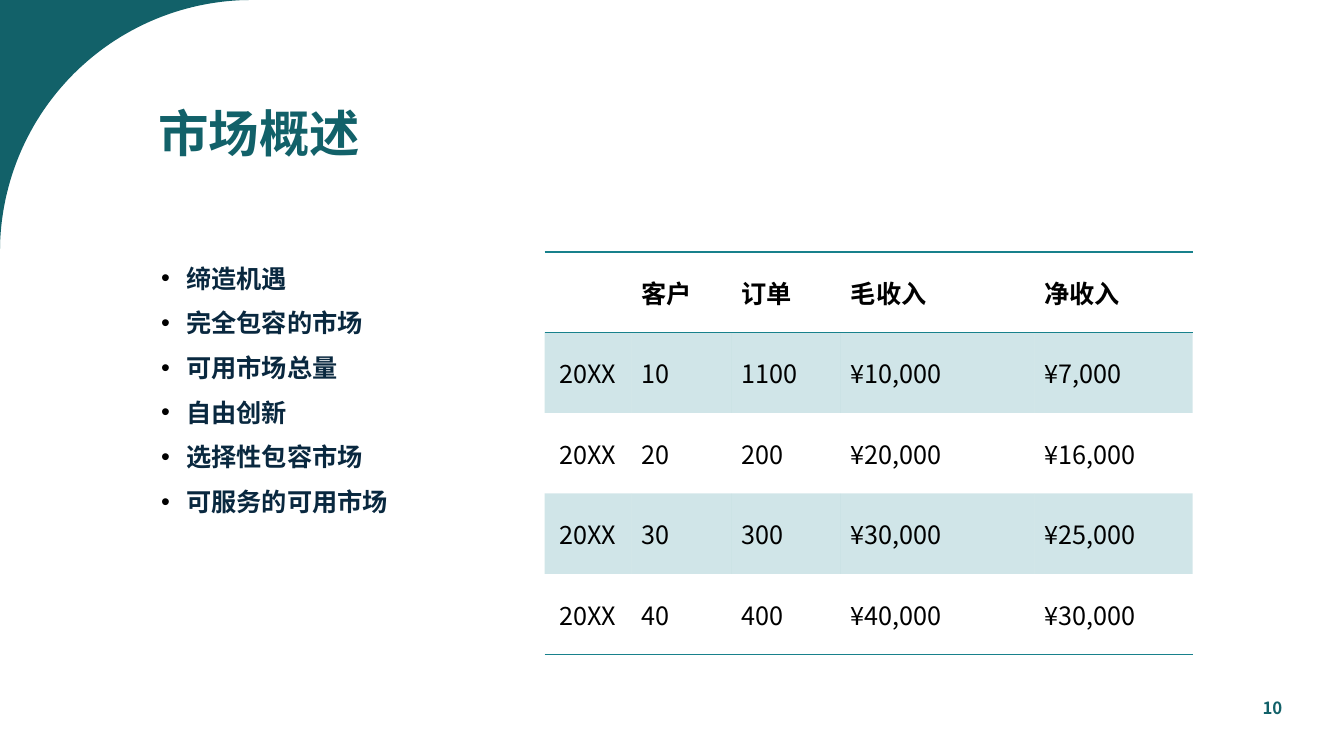
from math import cos, pi, sin

from lxml.etree import SubElement
from pptx import Presentation
from pptx.dml.color import RGBColor
from pptx.enum.text import MSO_ANCHOR, PP_ALIGN
from pptx.oxml import parse_xml
from pptx.oxml.ns import nsdecls, qn
from pptx.util import Pt

FONT = "Noto Sans CJK SC"
COLORS = {
    "teal": "126169",
    "navy": "09283F",
    "rule": "18818C",
    "black": "000000",
}
NO_STYLE = "{2D5ABB26-0587-4C30-8999-92F81FD0307C}"

TOPICS = ["缔造机遇", "完全包容的市场", "可用市场总量",
          "自由创新", "选择性包容市场", "可服务的可用市场"]
MARKET = [
    ["", "客户", "订单", "毛收入", "净收入"],
    ["20XX", "10", "1100", "¥10,000", "¥7,000"],
    ["20XX", "20", "200", "¥20,000", "¥16,000"],
    ["20XX", "30", "300", "¥30,000", "¥25,000"],
    ["20XX", "40", "400", "¥40,000", "¥30,000"],
]
COLUMN_SHARES = [0.86, 0.99, 1.09, 1.92, 1.57]


def rgb(name):
    return RGBColor.from_string(COLORS[name])


def add_run(paragraph, text, size, color, bold=True):
    run = paragraph.add_run()
    run.text = text
    font = run.font
    font.size, font.bold, font.name = Pt(size), bold, FONT
    font.color.rgb = rgb(color)
    SubElement(font._element, qn("a:ea")).set("typeface", FONT)


def add_text_frame(slide, box, anchor):
    frame = slide.shapes.add_textbox(*map(Pt, box)).text_frame
    frame.word_wrap = True
    frame.vertical_anchor = anchor
    return frame


def add_corner(slide, left, top, size, steps=60):
    """Square corner with a quarter circle cut out of it."""
    arc = [(left + size * (1 - sin(angle)), top + size * (1 - cos(angle)))
           for angle in (pi / 2 * step / steps for step in range(steps + 1))]
    outline = [(left, top)] + arc[::-1]
    points = [(Pt(x), Pt(y)) for x, y in outline]
    builder = slide.shapes.build_freeform(*points[0])
    builder.add_line_segments(points[1:], close=True)
    corner = builder.convert_to_shape()
    corner.shadow.inherit = False
    corner.fill.solid()
    corner.fill.fore_color.rgb = rgb("teal")
    corner.line.fill.background()


def add_title(slide, box, text):
    heading = add_text_frame(slide, box, MSO_ANCHOR.MIDDLE).paragraphs[0]
    heading.line_spacing = 0.9
    add_run(heading, text, 36, "teal")


def add_topics(slide, box, topics):
    frame = add_text_frame(slide, box, MSO_ANCHOR.TOP)
    for index, topic in enumerate(topics):
        entry = frame.add_paragraph() if index else frame.paragraphs[0]
        entry.line_spacing = 1.2
        entry.space_after = Pt(6)
        properties = entry._p.get_or_add_pPr()
        properties.set("marL", str(Pt(18)))
        properties.set("indent", str(-Pt(18)))
        bullet_color = SubElement(properties, qn("a:buClr"))
        SubElement(bullet_color, qn("a:srgbClr")).set("val", COLORS["black"])
        SubElement(properties, qn("a:buFont")).set("typeface", "Arial")
        SubElement(properties, qn("a:buChar")).set("char", "•")
        add_run(entry, topic, 18, "navy")


def add_border(cell, side):
    border = parse_xml(
        f'<a:{side} {nsdecls("a")} w="{Pt(1)}"><a:solidFill>'
        f'<a:srgbClr val="{COLORS["rule"]}"/></a:solidFill></a:{side}>')
    cell._tc.get_or_add_tcPr().insert(0, border)


def fill_cell(cell, banded):
    if not banded:
        cell.fill.background()
        return
    cell.fill.solid()
    cell.fill.fore_color.rgb = rgb("rule")
    tint = cell._tc.tcPr.find(".//" + qn("a:srgbClr"))
    SubElement(tint, qn("a:alpha")).set("val", "20000")


def add_market_table(slide, box, rows):
    left, top, width, height = box
    table = slide.shapes.add_table(
        len(rows), len(rows[0]), *map(Pt, box)).table
    table._tbl.tblPr.find(qn("a:tableStyleId")).text = NO_STYLE
    table.horz_banding = False
    for column, share in zip(table.columns, COLUMN_SHARES):
        column.width = Pt(width * share / sum(COLUMN_SHARES))
    for row in table.rows:
        row.height = Pt(height / len(rows))

    last = len(rows) - 1
    for r, values in enumerate(rows):
        for c, value in enumerate(values):
            cell = table.cell(r, c)
            cell.vertical_anchor = MSO_ANCHOR.MIDDLE
            fill_cell(cell, banded=r % 2 == 1)
            if r in (0, last):
                add_border(cell, "lnB")
            if r == 0:
                add_border(cell, "lnT")
            if value:
                paragraph = cell.text_frame.paragraphs[0]
                paragraph.alignment = PP_ALIGN.LEFT if c else PP_ALIGN.CENTER
                add_run(paragraph, value, 18, "black", bold=r == 0)


def add_page_number(slide, box, number):
    paragraph = add_text_frame(slide, box, MSO_ANCHOR.MIDDLE).paragraphs[0]
    paragraph.alignment = PP_ALIGN.CENTER
    add_run(paragraph, number, 12, "teal")


def main():
    deck = Presentation()
    deck.slide_width, deck.slide_height = Pt(960), Pt(540)
    slide = deck.slides.add_slide(deck.slide_layouts[6])

    # Corner and heading
    add_corner(slide, 0, 0, 180)
    add_title(slide, (106, 27.5, 803.5, 139), "市场概述")

    # Topics beside the figures
    add_topics(slide, (108, 180, 250.5, 287.5), TOPICS)
    add_market_table(slide, (389, 180, 463, 287.5), MARKET)

    # Footer
    add_page_number(slide, (858, 471, 102, 69), "10")

    deck.save("out.pptx")


if __name__ == "__main__":
    main()
